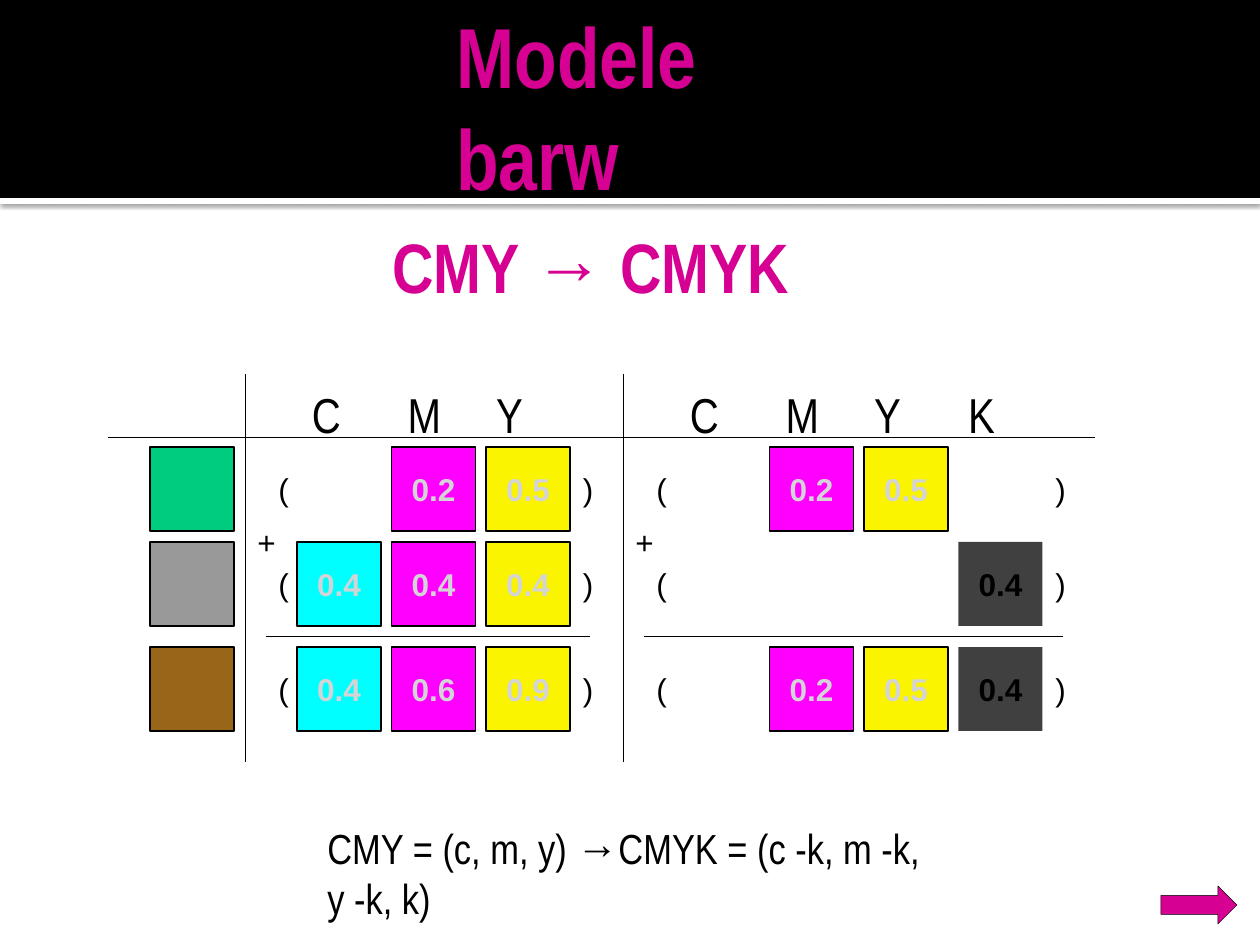
from lxml.etree import SubElement
from pptx import Presentation
from pptx.dml.color import RGBColor
from pptx.enum.shapes import MSO_CONNECTOR as LINE, MSO_SHAPE as SHAPE
from pptx.enum.text import MSO_ANCHOR as ANCHOR, PP_ALIGN as ALIGN
from pptx.oxml.ns import qn
from pptx.util import Pt

HEX = {"black": "000000", "white": "FFFFFF", "pink": "D60093", "pale": "D4D4D6",
       "green": "00CC7F", "gray": "999999", "brown": "996619",
       "C": "00FFFF", "M": "FF00FF", "Y": "FAF400", "K": "404040"}
NARROW, SANS = "Arial Narrow", "Arial"

TITLE = "Modele barw"
HEAD = "CMY → CMYK"
RULE = "CMY = (c, m, y) →CMYK = (c -k, m -k, y -k, k)"
SWATCHES = ["green", "gray", "brown"]
# Each model: left edge, ink letters, one row of values per swatch
MODELS = [
    (266, "CMY", [["", "0.2", "0.5"], ["0.4", "0.4", "0.4"], ["0.4", "0.6", "0.9"]]),
    (644, "CMYK", [["", "0.2", "0.5", ""], ["", "", "", "0.4"], ["", "0.2", "0.5", "0.4"]]),
]
ROWS = [447, 542, 647]
TABS = [48, 146, 231, 325]
TOP, BASE, FOOT = 374, 437, 762
SIDE, STEP, SIGN = 84, 94.5, 53


def px(n):
    return round(n * 914400 / 126)


def rgb(name):
    return RGBColor.from_string(HEX[name])


def write(shape, text, size, font, color="black", bold=False,
          align=ALIGN.LEFT, anchor=ANCHOR.TOP):
    frame = shape.text_frame
    frame.word_wrap = True
    frame.vertical_anchor = anchor
    para = frame.paragraphs[0]
    para.alignment = align
    run = para.add_run()
    run.text = text
    run.font.size, run.font.name, run.font.bold = Pt(size), font, bold
    run.font.color.rgb = rgb(color)
    return para


def label(on, x, y, w, h, text, size, font, **style):
    box = on.add_textbox(px(x), px(y), px(w), px(h))
    return box, write(box, text, size, font, **style)


def block(on, x, y, w, h, fill, edge=0, kind=SHAPE.RECTANGLE):
    shape = on.add_shape(kind, px(x), px(y), px(w), px(h))
    shape.shadow.inherit = False
    shape.fill.solid()
    shape.fill.fore_color.rgb = rgb(fill)
    if edge:
        shape.line.color.rgb = rgb("black")
        shape.line.width = Pt(edge)
    else:
        shape.line.fill.background()
    return shape


def rule(on, x1, y1, x2, y2):
    line = on.add_connector(LINE.STRAIGHT, px(x1), px(y1), px(x2), px(y2))
    line.line.color.rgb = rgb("black")
    line.line.width = Pt(0.5)
    SubElement(line._element.spPr, qn("a:effectLst"))


def cast(shape):
    """Give the shape a soft shadow straight below it."""
    effects = shape._element.spPr.find(qn("a:effectLst"))
    shadow = SubElement(effects, qn("a:outerShdw"), blurRad=str(Pt(2.5)),
                        dist=str(Pt(0.8)), dir="5400000")
    color = SubElement(shadow, qn("a:srgbClr"), val=HEX["black"])
    SubElement(color, qn("a:alpha"), val="60000")


def tab_stops(para, stops):
    tabs = SubElement(para._p.get_or_add_pPr(), qn("a:tabLst"))
    for stop in stops:
        SubElement(tabs, qn("a:tab"), pos=str(px(stop)), algn="ctr")


def sign(on, x, y, text):
    label(on, x, y, SIGN, SIDE, text, 18, SANS, anchor=ANCHOR.MIDDLE)


def model(on, left, inks, values):
    """Draw one block of ink values with its letters, brackets and sum line."""
    start = left + 31
    close = start + STEP * len(inks) - 10
    axis = left - 21
    rule(on, axis, TOP, axis, FOOT)
    rule(on, left, 636, close + 20, 636)
    _, para = label(on, left, TOP + 4, close - left, 72,
                    "".join("\t" + ink for ink in inks), 28, NARROW)
    tab_stops(para, TABS[:len(inks)])
    sign(on, axis, 500, "+")
    for y, row in zip(ROWS, values):
        sign(on, left, y, "(")
        sign(on, close, y, ")")
        for i, (ink, value) in enumerate(zip(inks, row)):
            if value:
                dark = ink == "K"
                cell = block(on, start + STEP * i, y, SIDE, SIDE, ink, 0 if dark else 1)
                write(cell, value, 18, SANS, "black" if dark else "pale", True,
                      ALIGN.CENTER, ANCHOR.MIDDLE)


def main():
    deck = Presentation()
    deck.slide_width, deck.slide_height = px(1260), px(945)
    slide = deck.slides.add_slide(deck.slide_layouts[6])
    page = slide.shapes

    cast(block(page, 0, 198, 1260, 6, "white"))
    block(page, 0, 0, 1260, 198, "black")
    label(page, 0, 217, 1182, 183, HEAD, 40, NARROW, color="pink", bold=True,
          align=ALIGN.CENTER)
    title, _ = label(page, 444, 59, 425, 173, TITLE, 48.6, NARROW, color="pink",
                     bold=True, anchor=ANCHOR.BOTTOM)
    title.text_frame.margin_bottom = px(24)
    block(page, 1161, 886, 76, 38, "pink", 0.25, SHAPE.RIGHT_ARROW)

    grid = page.add_group_shape().shapes
    rule(grid, 108, BASE, 1095, BASE)
    for y, color in zip(ROWS, SWATCHES):
        block(grid, 150, y, SIDE, SIDE, color, 1)
    for left, inks, values in MODELS:
        model(grid, left, inks, values)

    label(page, 315, 816, 630, 63, RULE, 24, NARROW)
    deck.save("out.pptx")


if __name__ == "__main__":
    main()
